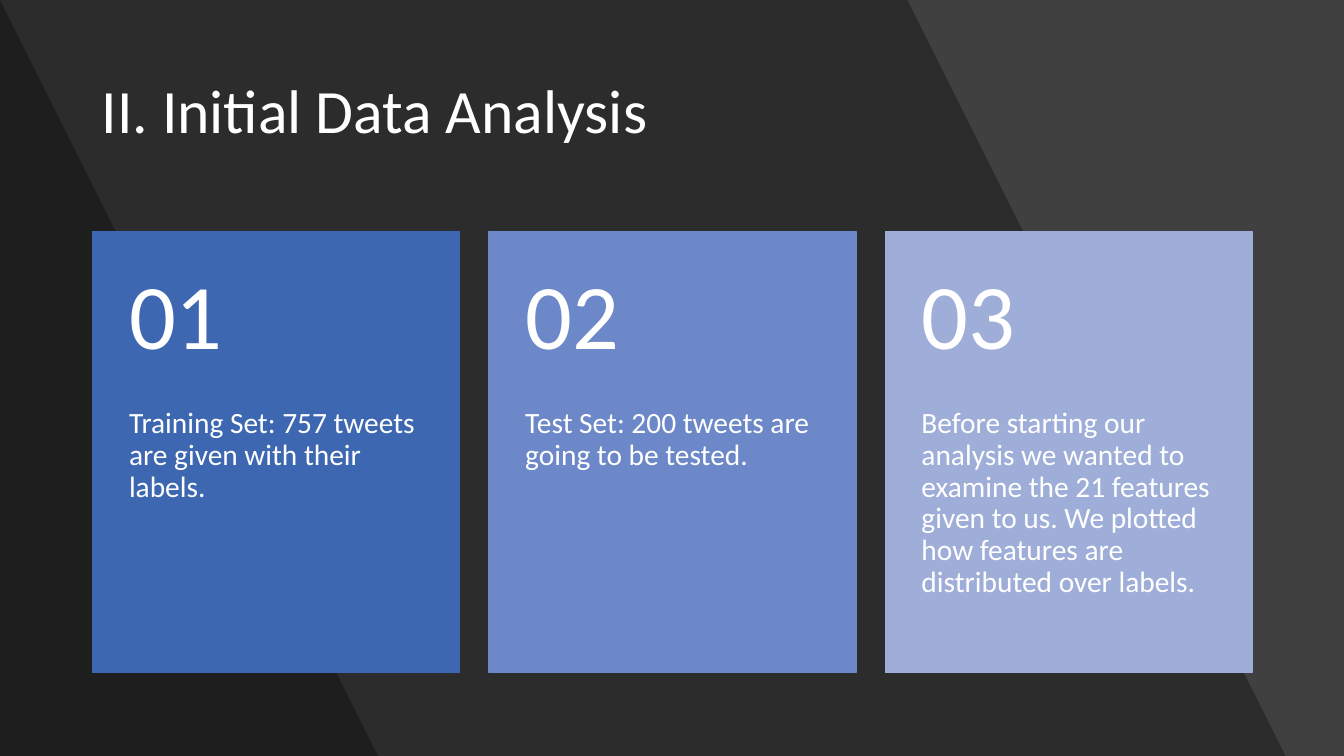
"""Build the Initial Data Analysis slide with three numbered cards."""
from dataclasses import dataclass

import pptx
import pptx.dml.color
import pptx.enum.shapes
import pptx.enum.text
import pptx.oxml
import pptx.oxml.ns
import pptx.util
from pptx.util import Inches


@dataclass(frozen=True)
class Theme:
    font: str = "Calibri"
    background: str = "404040"
    shade: str = "000000"
    shade_opacity: int = 30
    text: str = "FFFFFF"
    cards: tuple = ("3E67B2", "6C88C8", "9FAED8")
    title_size: int = 44
    number_size: int = 66
    body_size: int = 21


THEME = Theme()
WIDTH, HEIGHT = 13.33, 7.5
CARD_LEFT, CARD_TOP, CARD_WIDTH, CARD_PITCH = 0.92, 2.3, 3.64, 3.93
NUMBER_HEIGHT, BODY_HEIGHT = 1.75, 2.62
CARD_TEXTS = (
    "Training Set: 757 tweets are given with their labels.",
    "Test Set: 200 tweets are going to be tested.",
    "Before starting our analysis we wanted to examine the 21 features given to us. "
    "We plotted how features are distributed over labels.",
)


def color(value):
    return pptx.dml.color.RGBColor.from_string(value)


def add_text(page, text, left, top, width, height, *, size,
             margins=(0.1, 0.05, 0.1, 0.05), middle=False):
    box = page.shapes.add_textbox(Inches(left), Inches(top), Inches(width), Inches(height))
    frame = box.text_frame
    frame.word_wrap = True
    anchors = pptx.enum.text.MSO_ANCHOR
    frame.vertical_anchor = anchors.MIDDLE if middle else anchors.TOP
    frame.margin_left, frame.margin_top, frame.margin_right, frame.margin_bottom = map(
        Inches, margins)
    para = frame.paragraphs[0]
    para.line_spacing = 0.9
    span = para.add_run()
    span.text = text
    span.font.name = THEME.font
    span.font.size = pptx.util.Pt(size)
    span.font.color.rgb = color(THEME.text)


def add_shade(page, top_right, bottom_right):
    """Draw a translucent band from the left edge to a slanted right side."""
    builder = page.shapes.build_freeform(0, 0, scale=Inches(1))
    builder.add_line_segments([(top_right, 0), (bottom_right, HEIGHT), (0, HEIGHT)], close=True)
    band = builder.convert_to_shape()
    band.shadow.inherit = False
    band.line.fill.background()
    band.fill.solid()
    band.fill.fore_color.rgb = color(THEME.shade)
    tint = band.fill._xPr.find(".//" + pptx.oxml.ns.qn("a:srgbClr"))
    alpha = pptx.oxml.parse_xml(
        f'<a:alpha {pptx.oxml.ns.nsdecls("a")} val="{THEME.shade_opacity * 1000}"/>')
    tint.append(alpha)


def add_card(page, index, text):
    left = CARD_LEFT + index * CARD_PITCH
    card = page.shapes.add_shape(
        pptx.enum.shapes.MSO_SHAPE.RECTANGLE, Inches(left), Inches(CARD_TOP),
        Inches(CARD_WIDTH), Inches(NUMBER_HEIGHT + BODY_HEIGHT))
    card.shadow.inherit = False
    card.fill.solid()
    card.fill.fore_color.rgb = color(THEME.cards[index])
    card.line.color.rgb = color(THEME.cards[index])
    card.line.width = pptx.util.Pt(1)
    add_text(page, text, left, CARD_TOP + NUMBER_HEIGHT, CARD_WIDTH, BODY_HEIGHT,
             size=THEME.body_size, margins=(0.36, 0, 0.36, 0.36))
    add_text(page, f"{index + 1:02}", left, CARD_TOP, CARD_WIDTH, NUMBER_HEIGHT,
             size=THEME.number_size, margins=(0.36, 0.18, 0.36, 0.18), middle=True)


def main():
    deck = pptx.Presentation()
    deck.slide_width, deck.slide_height = Inches(WIDTH), Inches(HEIGHT)
    page = deck.slides.add_slide(deck.slide_layouts[6])
    page.background.fill.solid()
    page.background.fill.fore_color.rgb = color(THEME.background)
    add_shade(page, 9.42, 12.89)
    add_shade(page, 0.44, 3.92)
    add_text(page, "II. Initial Data Analysis", 0.91, 0.4, 11.51, 1.45,
             size=THEME.title_size, middle=True)
    for index, text in enumerate(CARD_TEXTS):
        add_card(page, index, text)
    deck.save("out.pptx")


if __name__ == "__main__":
    main()
